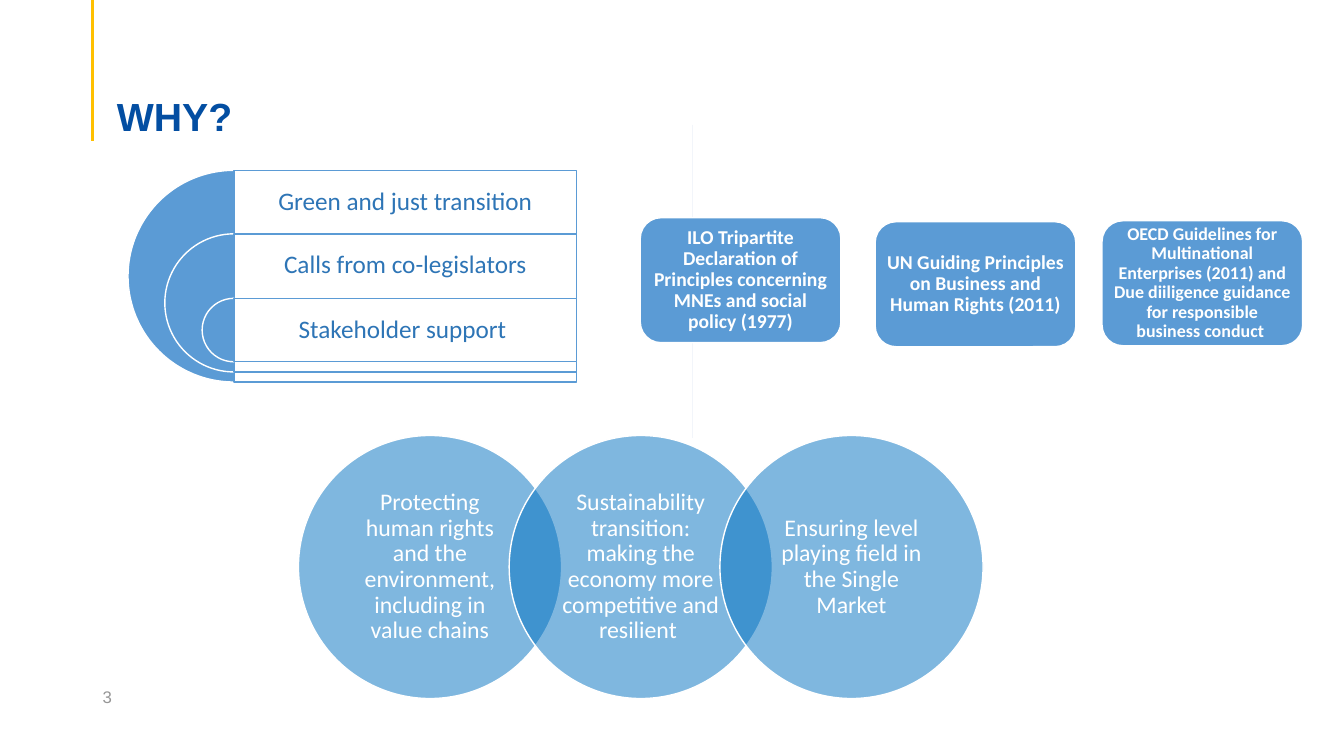
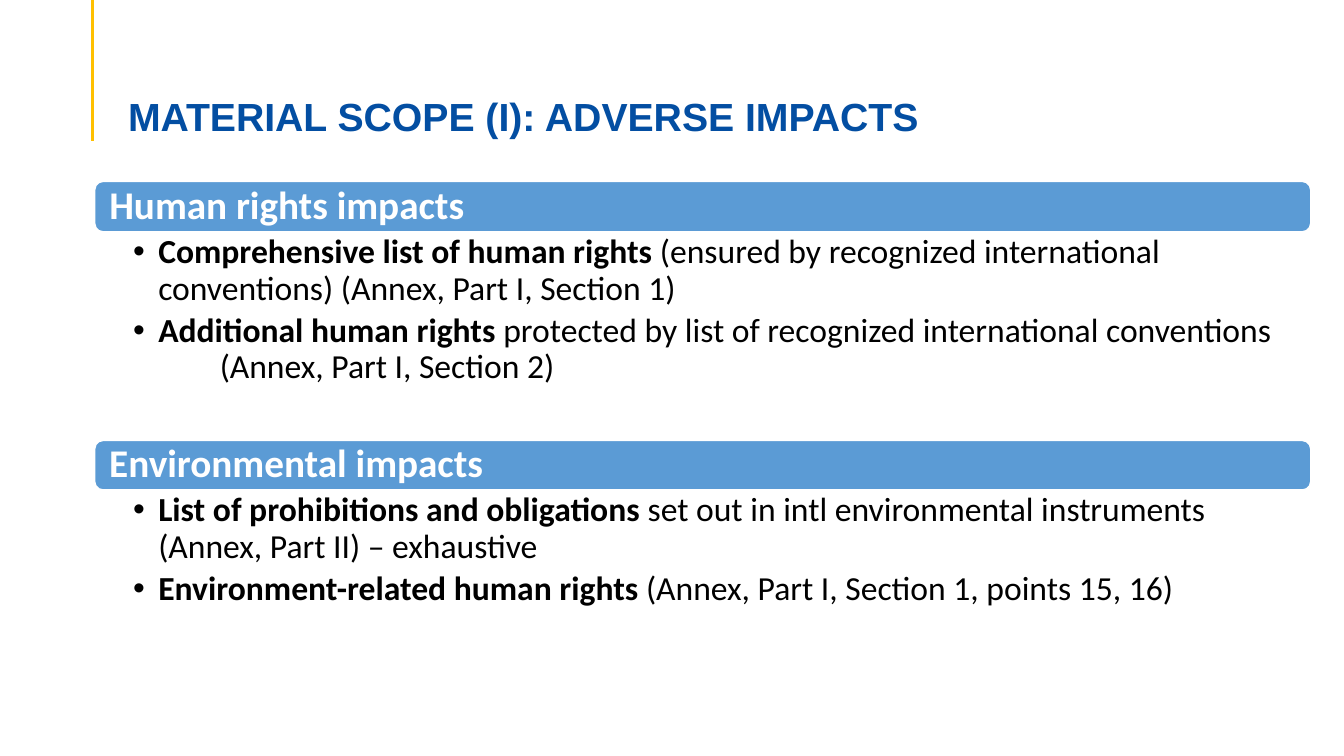
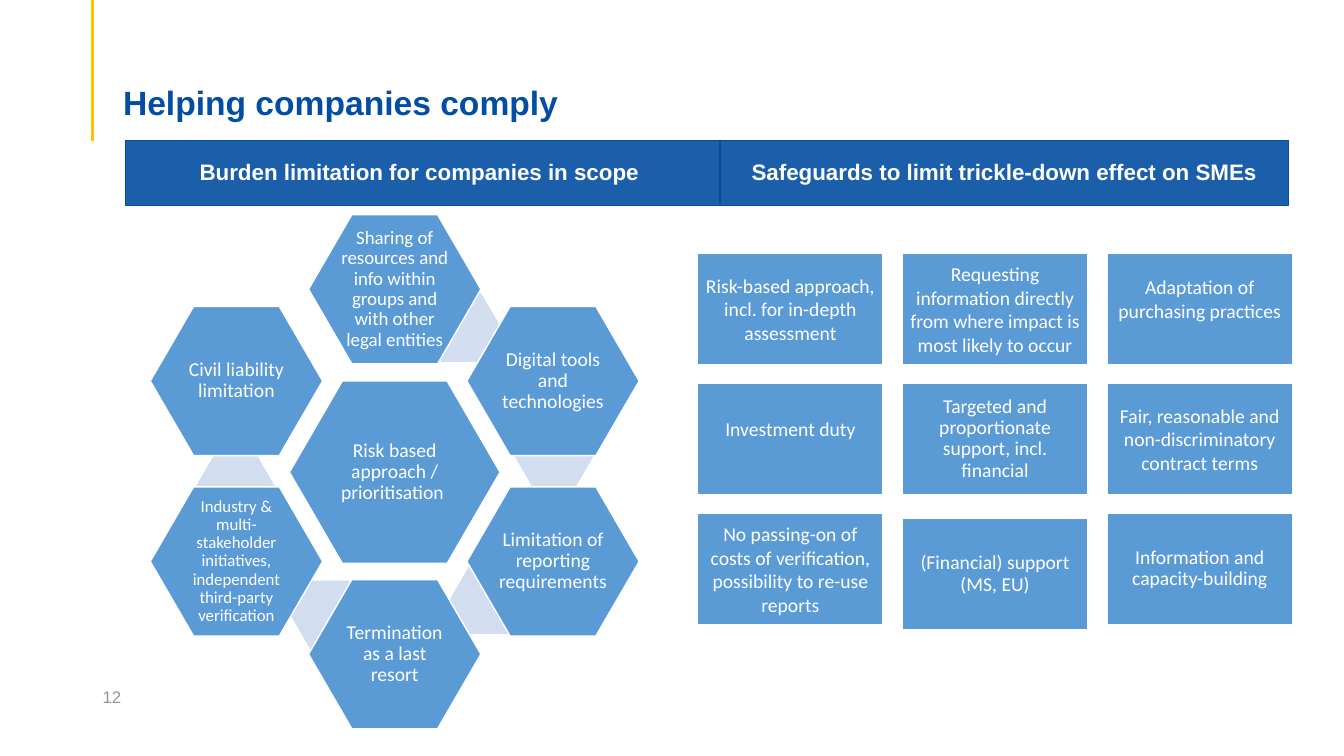
from lxml import etree
from pptx import Presentation
from pptx.dml.color import RGBColor
from pptx.enum import shapes, text
from pptx.oxml import ns
from pptx.util import Inches, Pt

rgb = RGBColor.from_string
NAVY, BLUE, PALE, WHITE = "034EA2", "5B9BD5", "D2DEEF", "FFFFFF"
KIND = shapes.MSO_SHAPE
LEFT, CENTER = text.PP_ALIGN.LEFT, text.PP_ALIGN.CENTER
MIDDLE = text.MSO_ANCHOR.MIDDLE


def style(item, size, color, bold=False, name="Calibri"):
    item.font.size = Pt(size)
    item.font.name = name
    item.font.bold = bold
    item.font.color.rgb = rgb(color)


def add_box(s, kind, at, label="", size=14, fill=BLUE, line=WHITE, width=1, alpha=100, color=WHITE,
            bold=False, name="Calibri", align=CENTER, inset=0.06, lift=0, spacing=0.9, adj=()):
    sp = s.shapes.add_shape(kind, *map(Inches, at))
    sp.shadow.inherit = False
    for i, value in enumerate(adj):
        sp.adjustments[i] = value
    sp.fill.solid()
    sp.fill.fore_color.rgb = rgb(fill)
    if alpha < 100:
        clr = sp._element.spPr.find(".//" + ns.qn("a:srgbClr"))
        etree.SubElement(clr, ns.qn("a:alpha"), val=str(alpha * 1000))
    if line:
        sp.line.color.rgb = rgb(line)
        sp.line.width = Pt(width)
    else:
        sp.line.fill.background()
    if label:
        tf = sp.text_frame
        tf.word_wrap = True
        tf.vertical_anchor = MIDDLE
        tf.margin_left = tf.margin_right = tf.margin_top = Inches(inset)
        tf.margin_bottom = Inches(inset + lift)
        p = tf.paragraphs[0]
        p.text = label
        p.alignment = align
        p.line_spacing = spacing
        style(p.runs[0], size, color, bold, name)


prs = Presentation()
prs.slide_width, prs.slide_height = Inches(13.33), Inches(7.5)

for title, left, top, size, number in [
    ("WHY?", 1.06, 0.53, 28, "3"),
    ("MATERIAL SCOPE (I): ADVERSE IMPACTS", 1.17, 0.53, 28, ""),
    ("Helping companies comply", 1.12, 0.36, 24, "12"),
]:
    s = prs.slides.add_slide(prs.slide_layouts[5])
    sp = s.shapes.title
    sp.left, sp.top, sp.width, sp.height = map(Inches, (left, top, 11.5, 0.86))
    tf = sp.text_frame
    tf.text = title
    tf.vertical_anchor = text.MSO_ANCHOR.BOTTOM
    tf.margin_bottom = 0
    p = tf.paragraphs[0]
    p.alignment = LEFT
    p.line_spacing = 0.9
    style(p.runs[0], size, NAVY, True, "Arial")

    rule = s.shapes.add_connector(shapes.MSO_CONNECTOR.STRAIGHT, Inches(0.92), 0, Inches(0.92), Inches(1.4))
    rule.line.color.rgb = rgb("FFC000")
    rule.line.width = Pt(2.25)
    etree.SubElement(rule._element.spPr, ns.qn("a:effectLst"))

    if number:
        tf = s.shapes.add_textbox(*map(Inches, (0.92, 6.71, 3, 0.4))).text_frame
        tf.text = number
        tf.word_wrap = True
        tf.vertical_anchor = MIDDLE
        style(tf.paragraphs[0].runs[0], 12, "969696", name="Arial")

why, scope, comply = prs.slides

drivers = [
    (1.69, 2.1, "Green and just transition"),
    (2.32, 1.37, "Calls from co-legislators"),
    (2.96, 0.63, "Stakeholder support "),
]
for top, height, label in drivers:
    add_box(why, KIND.PIE, (2.32 - height / 2, top, height, height), adj=(54, 162))
    add_box(why, KIND.RECTANGLE, (2.32, top, 3.4, height), label, 18, WHITE, BLUE, alpha=90,
            color="2E75B6", inset=0.07, lift=height - 0.63)

divider = why.shapes.add_connector(shapes.MSO_CONNECTOR.STRAIGHT, *map(Inches, (6.87, 1.24, 6.87, 4.35)))
divider.line.color.rgb = rgb("F2F5FA")
divider.line.width = Pt(0.5)
etree.SubElement(divider._element.spPr, ns.qn("a:effectLst"))

standards = [
    (6.35, 2.16, 14, "ILO Tripartite Declaration of Principles concerning MNEs and social policy (1977)"),
    (8.68, 2.2, 14, "UN Guiding Principles on Business and Human Rights (2011)"),
    (10.93, 2.19, 12.8, "OECD Guidelines for Multinational Enterprises (2011) and Due diiligence guidance "
                        "for responsible business conduct "),
]
for left, top, size, label in standards:
    add_box(why, KIND.ROUNDED_RECTANGLE, (left, top, 1.99, 1.24), label, size, bold=True, inset=0.05)

goals = [
    "Protecting human rights and the environment, including in value chains",
    "Sustainability transition: making the economy more competitive and resilient ",
    "Ensuring level playing field in the Single Market",
]
for i, label in enumerate(goals):
    add_box(why, KIND.OVAL, (2.96 + 2.09 * i, 4.32, 2.61, 2.61), label, 17, "0070C0", alpha=50, inset=0.14)

impacts = [
    ("Human rights impacts", 1.8, 0.5, 2.07, [
        ("Comprehensive list of human rights ",
         "(ensured by recognized international conventions) (Annex, Part I, Section 1)"),
        ("Additional human rights ", "protected by list of recognized international conventions"),
        ("", "(Annex, Part I, Section 2)"),
    ]),
    ("Environmental impacts", 4.37, 0.49, 1.67, [
        ("List of prohibitions and obligations ",
         "set out in intl environmental instruments (Annex, Part II) – exhaustive"),
        ("Environment-related human rights ", "(Annex, Part I, Section 1, points 15, 16)"),
    ]),
]
for heading, top, height, body, points in impacts:
    add_box(scope, KIND.ROUNDED_RECTANGLE, (0.94, top, 12.06, height), heading, 28, bold=True,
            align=LEFT, inset=0.12)
    tf = scope.shapes.add_textbox(*map(Inches, (0.94, top + height, 12.06, body))).text_frame
    tf.word_wrap = True
    tf.margin_left, tf.margin_right = Inches(0.38), Inches(0.19)
    tf.margin_top = tf.margin_bottom = Inches(0.03)
    for i, (lead, rest) in enumerate(points):
        p = tf.paragraphs[0] if i == 0 else tf.add_paragraph()
        pPr = p._p.get_or_add_pPr()
        pPr.set("marL", str(Inches(0.25 if lead else 0.86)))
        pPr.set("indent", str(Inches(-0.25 if lead else 0)))
        if lead:
            etree.SubElement(pPr, ns.qn("a:buFont"), typeface="Arial")
            etree.SubElement(pPr, ns.qn("a:buChar"), char="•")
        p.line_spacing = 0.9
        continued = i + 1 < len(points) and not points[i + 1][0]
        p.space_after = Pt(0 if continued else 4.5)
        for part, bold in ((lead, True), (rest, False)):
            if part:
                r = p.add_run()
                r.text = part
                style(r, 24, "000000", bold)

safeguards = [
    [("Risk-based approach, incl. for in-depth assessment", 1, 0),
     ("Requesting information directly from where impact is most likely to occur", 1, 0),
     ("Adaptation of purchasing practices", 1, 0.2)],
    [("Investment duty", 1, 0.2),
     ("Targeted and proportionate support, incl. financial", 0.9, 0),
     ("Fair, reasonable and non-discriminatory contract terms", 1, 0)],
    [("No passing-on of costs of verification, possibility to re-use reports", 1, 0),
     ("(Financial) support (MS, EU)", 0.9, 0),
     ("Information and capacity-building", 0.9, 0)],
]
for row, cells in enumerate(safeguards):
    for col, (label, spacing, lift) in enumerate(cells):
        top = 5.14 if (row, col) == (2, 1) else 2.51 + 1.29 * row
        add_box(comply, KIND.RECTANGLE, (6.92 + 2.03 * col, top, 1.84, 1.11), label,
                spacing=spacing, lift=lift)

for left, top in [(4.18, 2.91), (5.1, 4.18), (4.46, 5.61), (2.88, 5.76), (1.94, 4.49)]:
    add_box(comply, KIND.HEXAGON, (left, top, 0.79, 0.68), fill=PALE, line=None, adj=(0.29,))

add_box(comply, KIND.HEXAGON, (2.87, 3.78, 2.09, 1.81), "Risk based approach / prioritisation ",
        inset=0.02, adj=(0.29,))
measures = [
    (3.06, 2.13, 13.5, "Sharing of resources and info within groups and with other legal entities"),
    (4.63, 3.04, 14, "Digital tools and technologies"),
    (4.63, 4.83, 14, "Limitation of reporting requirements"),
    (3.06, 5.75, 14, "Termination as a last resort"),
    (1.49, 4.83, 12, "Industry & multi-stakeholder initiatives, independent third-party verification"),
    (1.49, 3.04, 14, "Civil liability limitation"),
]
for left, top, size, label in measures:
    add_box(comply, KIND.HEXAGON, (left, top, 1.71, 1.48), label, size, inset=0.02, adj=(0.29,))

for left, width, label in [
    (1.24, 5.9, "Burden limitation for companies in scope "),
    (7.14, 5.64, "Safeguards to limit trickle-down effect on SMEs"),
]:
    add_box(comply, KIND.RECTANGLE, (left, 1.39, width, 0.65), label, 16, NAVY, NAVY, 0.5, 90,
            bold=True, name="Arial", inset=0.16)

prs.save("out.pptx")
